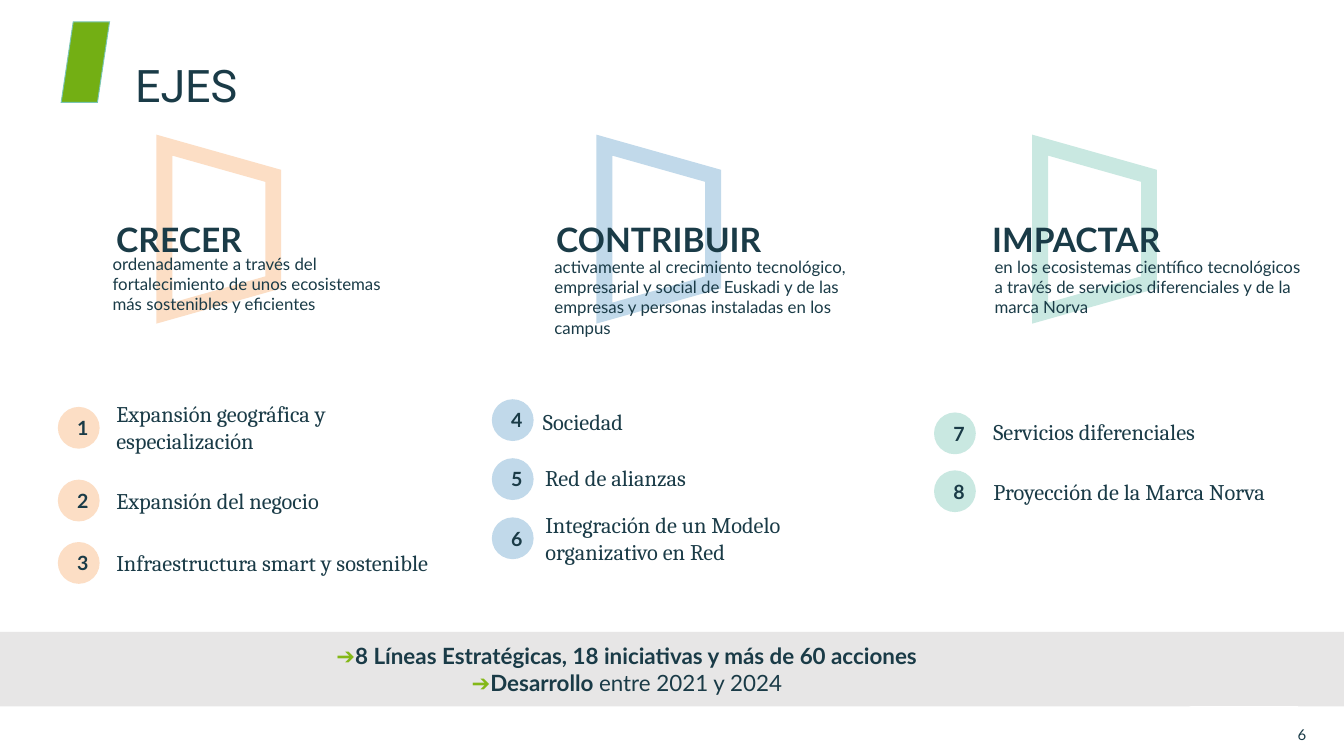
import lxml.etree
import pptx
import pptx.dml.color
import pptx.enum.shapes
import pptx.enum.text
import pptx.oxml.ns
import pptx.util

Pt = pptx.util.Pt
RGB = pptx.dml.color.RGBColor
MSO = pptx.enum.shapes.MSO_SHAPE
ALIGN = pptx.enum.text.PP_ALIGN
ANCHOR = pptx.enum.text.MSO_ANCHOR

INK = RGB(0x1A, 0x3B, 0x47)
GREY = RGB(0xE7, 0xE6, 0xE6)
LEAF = RGB(0x73, 0xAF, 0x14)
LIME = RGB(0x84, 0xB8, 0x18)
TEAL = RGB(0x79, 0xC5, 0xB3)
PEACH = RGB(0xFC, 0xDE, 0xC5)
BLUE = RGB(0xC1, 0xD9, 0xEA)
MINT = RGB(0xC9, 0xE8, 0xE1)


class Deck:
    """Style and current slide; every length is in points."""

    def __init__(self):
        self.prs = pptx.Presentation()
        self.prs.slide_width, self.prs.slide_height = Pt(720), Pt(405)
        self.s = self.prs.slides.add_slide(self.prs.slide_layouts[6])

    def run(self, p, text, size, font="Lato", color=INK, bold=False):
        r = p.add_run()
        r.text = text
        r.font.size, r.font.name, r.font.bold = Pt(size), font, bold
        r.font.color.rgb = color

    def frame(self, sp, ins=(7.2, 3.6, 7.2, 3.6), anchor=ANCHOR.MIDDLE):
        tf = sp.text_frame
        tf.word_wrap = True
        tf.vertical_anchor = anchor
        tf.margin_left, tf.margin_top, tf.margin_right, tf.margin_bottom = map(Pt, ins)
        return tf

    def text(self, box, text, size, font="Lato", bold=False, ins=(7.2, 3.6, 7.2, 3.6),
             anchor=ANCHOR.MIDDLE, align=ALIGN.LEFT, parent=None):
        sp = (parent or self.s).shapes.add_textbox(*map(Pt, box))
        p = self.frame(sp, ins, anchor).paragraphs[0]
        p.alignment = align
        self.run(p, text, size, font, bold=bold)

    def paint(self, sp, fill=None, line=None, width=0):
        sp.shadow.inherit = False
        if fill is None:
            sp.fill.background()
        else:
            sp.fill.solid()
            sp.fill.fore_color.rgb = fill
        if line is None:
            sp.line.fill.background()
        else:
            sp.line.color.rgb = line
            sp.line.width = Pt(width)
            # Sharp corners
            ln = sp.element.spPr.find(pptx.oxml.ns.qn("a:ln"))
            miter = lxml.etree.SubElement(ln, pptx.oxml.ns.qn("a:miter"))
            miter.set("lim", "800000")
        return sp

    def shape(self, kind, box, fill=None, line=None, width=0, parent=None):
        sp = (parent or self.s).shapes.add_shape(kind, *map(Pt, box))
        return self.paint(sp, fill, line, width)

    def polygon(self, points, fill):
        pts = [(Pt(x), Pt(y)) for x, y in points]
        fb = self.s.shapes.build_freeform(*pts[0], scale=1.0)
        fb.add_line_segments(pts[1:], close=True)
        return self.paint(fb.convert_to_shape(), fill)

    def axis(self, x, color, title, body_box, body):
        group = self.s.shapes.add_group_shape()
        trap = self.shape(MSO.TRAPEZOID, (x, 93.6, 90, 58.3), None, color, 8.5, group)
        trap.adjustments[0] = 0.282
        trap.rotation = 90
        self.text((x - 17, 113.8, 148.3, 28.8), title, 18, bold=True,
                  anchor=ANCHOR.TOP, parent=group)
        self.text(body_box, body, 9, ins=(2.2,) * 4)

    def item(self, number, x, y, color, box, label):
        sp = self.shape(MSO.OVAL, (x, y, 22.4, 22.4), color)
        p = self.frame(sp).paragraphs[0]
        p.alignment = ALIGN.CENTER
        self.run(p, str(number), 10.5, bold=True)
        self.text(box, label, 12, "Cambria", ins=(4.3, 2.2, 4.3, 2.2))


# Axes: left edge of frame, colour, title, body box, body
AXES = [
    (72.2, PEACH, "CRECER", (58.1, 122.9, 152.6, 58.3),
     "ordenadamente a través del fortalecimiento de unos ecosistemas "
     "más sostenibles y eficientes"),
    (307.9, BLUE, "CONTRIBUIR", (294.8, 127.1, 176.4, 64.1),
     "activamente al crecimiento tecnológico, empresarial y social de Euskadi "
     "y de las empresas y personas instaladas en los campus"),
    (541.4, MINT, "IMPACTAR", (530.6, 121.4, 169.2, 64.8),
     "en los ecosistemas científico tecnológicos a través de servicios "
     "diferenciales y de la marca Norva"),
]

# Strategic lines: circle left, circle top, colour, label box, label
LINES = [
    (31, 218, PEACH, (58, 214.6, 183.6, 28.8), "Expansión geográfica y especialización"),
    (31, 257, PEACH, (58, 254.9, 194.4, 26.6), "Expansión del negocio"),
    (31, 290.4, PEACH, (58, 291.6, 183.6, 19.4), "Infraestructura smart y sostenible"),
    (263.5, 213.9, BLUE, (286.6, 219, 100, 13.7), "Sociedad"),
    (263.5, 245.5, BLUE, (287.8, 249.1, 100, 13.7), "Red de alianzas"),
    (263.5, 277.2, BLUE, (287.8, 281.5, 174.2, 13.7),
     "Integración de un Modelo organizativo en Red"),
    (500.4, 221, MINT, (527.8, 219.4, 144.7, 23.8), "Servicios diferenciales"),
    (500.4, 252, MINT, (527.8, 256.3, 174.2, 14.4), "Proyección de la Marca Norva"),
]


def main():
    d = Deck()

    # Title
    d.shape(MSO.PARALLELOGRAM, (32.8, 11.7, 25.9, 43.2), LEAF, TEAL, 0.5)
    d.text((65.3, 27.4, 175.7, 36), "EJES", 24, "Roboto", anchor=ANCHOR.TOP)

    # Three axes and their numbered lines
    for axis in AXES:
        d.axis(*axis)
    for number, line in enumerate(LINES, 1):
        d.item(number, *line)

    # Summary band
    d.shape(MSO.RECTANGLE, (0, 338.6, 720, 39.6), GREY)
    band = d.polygon([(0, 338.6), (720, 338.6), (720, 378.4), (695.5, 378.4),
                      (695.5, 361.4), (637.2, 378.4), (0, 378.4)], GREY)
    tf = d.frame(band, (56.9, 3.6, 105.1, 3.6))
    summary = [
        [("8 Líneas Estratégicas, 18 iniciativas y más de 60 acciones", True)],
        [("Desarrollo ", True), ("entre 2021 y 2024", False)],
    ]
    for i, runs in enumerate(summary):
        p = tf.add_paragraph() if i else tf.paragraphs[0]
        p.alignment = ALIGN.CENTER
        d.run(p, "➔", 12, "Arial", LIME, True)
        for text, bold in runs:
            d.run(p, text, 12, bold=bold)

    # Page number
    d.text((677.5, 383.8, 22.3, 19.4), "6", 8, ins=(0,) * 4, align=ALIGN.RIGHT)

    d.prs.save("out.pptx")


if __name__ == "__main__":
    main()
